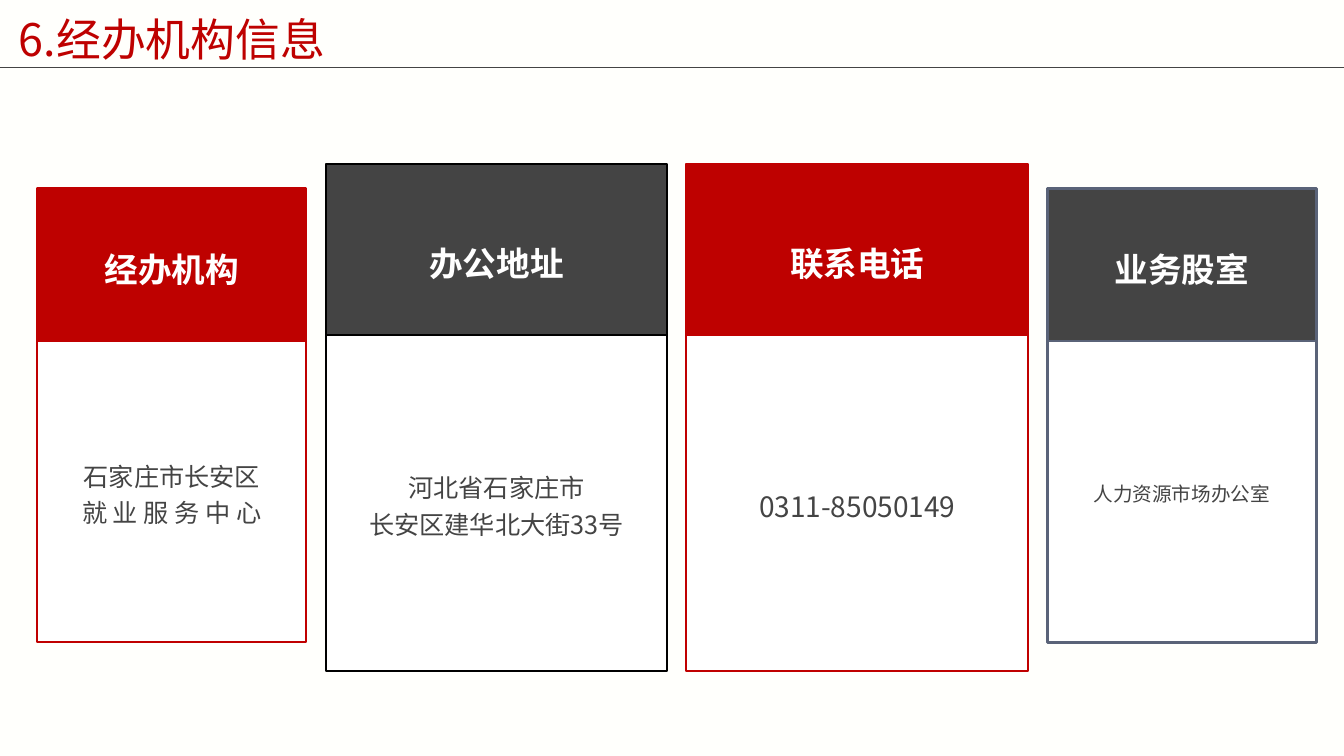
from dataclasses import dataclass

from lxml import etree
from pptx import Presentation
from pptx import util as u
from pptx.dml.color import RGBColor
from pptx.enum import shapes, text
from pptx.oxml import ns

FONT = "Noto Sans CJK SC"
RED, EDGE_RED, GREY, SLATE = "BE0100", "C00000", "444444", "5A6378"
WHITE, BLACK, IVORY = "FFFFFF", "000000", "FFFFFC"
CARD_LEFT, CARD_GAP = 26.64, 13.68


@dataclass(frozen=True)
class CardSize:
    width: float
    top: float
    head_height: float
    body_height: float


@dataclass(frozen=True)
class Card:
    heading: str
    lines: tuple[str, ...]
    size: CardSize
    head_fill: str
    edge: str
    edge_width: float = 1.5
    body_font_size: float = 18


SIDE = CardSize(192.24, 134.64, 108.9, 215.28)
CENTRE = CardSize(244.08, 117.36, 122, 239.76)

CARDS = (
    Card("经办机构", ("石家庄市长安区", "就 业 服 务 中 心"), SIDE, RED, EDGE_RED),
    Card("办公地址", ("河北省石家庄市", "长安区建华北大街33号"), CENTRE, GREY, BLACK),
    Card("联系电话", ("0311-85050149",), CENTRE, RED, EDGE_RED, body_font_size=20),
    Card("业务股室", ("人力资源市场办公室",), SIDE, GREY, SLATE, 1.75, 14),
)


def colour(value: str) -> RGBColor:
    return RGBColor.from_string(value)


def write(frame, lines, *, size: float, color: str, bold: bool = False,
          align=text.PP_ALIGN.CENTER, anchor=text.MSO_ANCHOR.MIDDLE,
          spacing: float = 1.0, wrap: bool = True, bottom: float = 3.6) -> None:
    """Fill a text frame, one paragraph per line."""
    frame.word_wrap = wrap
    frame.vertical_anchor = anchor
    frame.margin_bottom = u.Pt(bottom)
    for index, line in enumerate(lines):
        para = frame.add_paragraph() if index else frame.paragraphs[0]
        para.alignment = align
        para.line_spacing = spacing
        span = para.add_run()
        span.text = line
        span.font.name = FONT
        span.font.size = u.Pt(size)
        span.font.bold = bold
        span.font.color.rgb = colour(color)
        east_asian = etree.SubElement(span.font._element, ns.qn("a:ea"))
        east_asian.set("typeface", FONT)


def add_box(page, left: float, top: float, width: float, height: float,
            fill: str, edge: str, edge_width: float):
    box = page.shapes.add_shape(shapes.MSO_SHAPE.RECTANGLE, u.Pt(left), u.Pt(top),
                                u.Pt(width), u.Pt(height))
    box.shadow.inherit = False
    box.fill.solid()
    box.fill.fore_color.rgb = colour(fill)
    box.line.color.rgb = colour(edge)
    box.line.width = u.Pt(edge_width)
    return box


def add_card(page, card: Card, left: float) -> None:
    size = card.size
    split = size.top + size.head_height
    body = add_box(page, left, split, size.width, size.body_height,
                   WHITE, card.edge, card.edge_width)
    write(body.text_frame, card.lines, size=card.body_font_size, color=GREY, spacing=1.2)
    head = add_box(page, left, size.top, size.width, size.head_height,
                   card.head_fill, card.edge, card.edge_width)
    write(head.text_frame, (card.heading,), size=24, color=WHITE, bold=True,
          anchor=text.MSO_ANCHOR.BOTTOM, wrap=False, bottom=37)


def add_title(page, title: str) -> None:
    """Add the title and the rule across the page below it."""
    rule = page.shapes.add_connector(shapes.MSO_CONNECTOR.STRAIGHT,
                                     u.Pt(0), u.Pt(48.24), u.Pt(960), u.Pt(48.24))
    rule.line.color.rgb = colour(GREY)
    rule.line.width = u.Pt(0.5)
    etree.SubElement(rule._element.spPr, ns.qn("a:effectLst"))
    box = page.shapes.add_textbox(u.Pt(6.48), u.Pt(4.32), u.Pt(414.72), u.Pt(46.08))
    write(box.text_frame, (title,), size=32, color=RED, align=text.PP_ALIGN.LEFT)


def main() -> None:
    deck = Presentation()
    deck.slide_width, deck.slide_height = u.Pt(960), u.Pt(540)
    page = deck.slides.add_slide(deck.slide_layouts[6])
    page.background.fill.solid()
    page.background.fill.fore_color.rgb = colour(IVORY)
    add_title(page, "6.经办机构信息")
    left = CARD_LEFT
    for card in CARDS:
        add_card(page, card, left)
        left += card.size.width + CARD_GAP
    deck.save("out.pptx")


if __name__ == "__main__":
    main()
